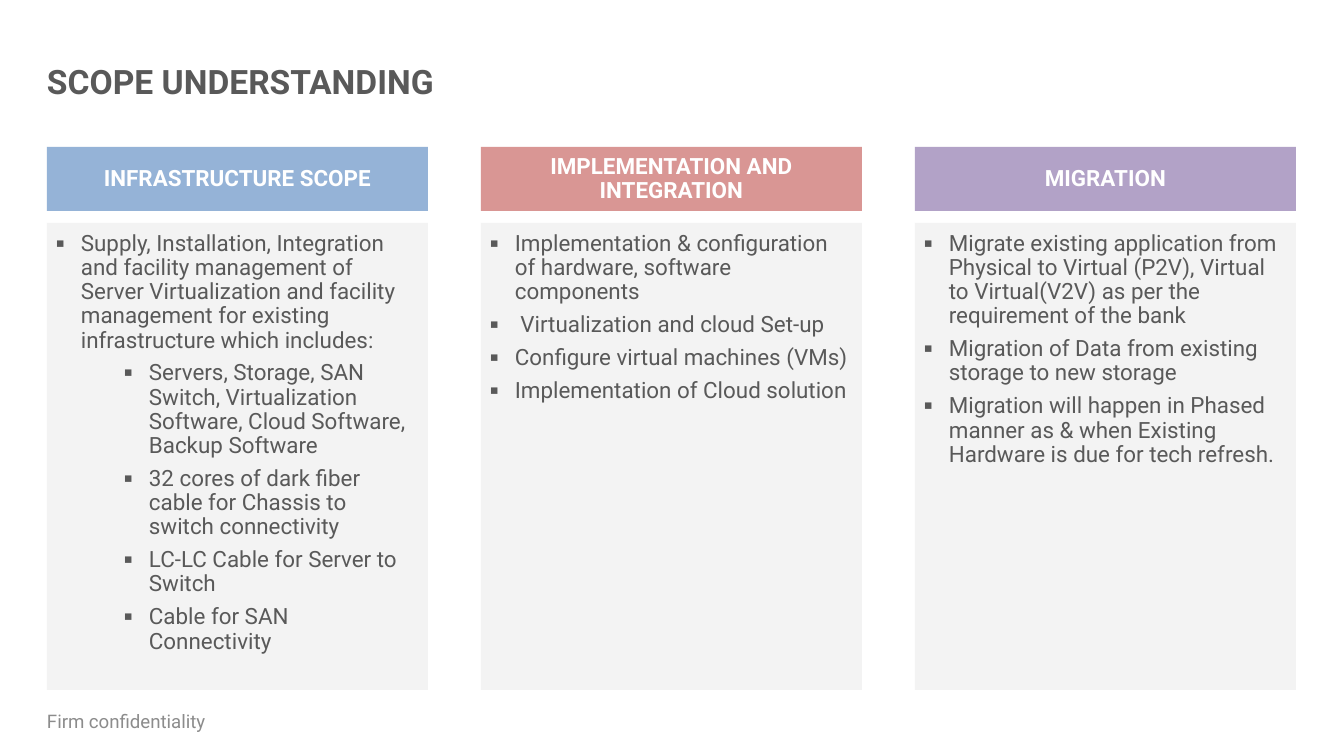
from lxml.etree import SubElement
from pptx import Presentation
from pptx.dml.color import RGBColor
from pptx.enum.shapes import MSO_SHAPE
from pptx.enum.text import MSO_ANCHOR, PP_ALIGN
from pptx.oxml.ns import qn
from pptx.util import Emu, Pt

COLORS = {
    "text": "595959",
    "footer": "8C8C8C",
    "white": "FFFFFF",
    "panel": "F2F2F2",
    "blue": "95B3D7",
    "red": "D99694",
    "purple": "B2A2C7",
}
EMU_PER_PX = 914400 / 134.4
LEFT, COLUMN_WIDTH, COLUMN_PITCH = 47, 381, 434
HANGING = 25
LEVEL_MARGINS = {1: 25, 2: 93}

SCOPES = [
    ("INFRASTRUCTURE SCOPE", "blue", [
        (1, "Supply, Installation, Integration and facility management of Server "
            "Virtualization and facility management for existing infrastructure "
            "which includes:"),
        (2, "Servers, Storage, SAN Switch, Virtualization Software, Cloud Software, "
            "Backup Software"),
        (2, "32 cores of dark fiber cable for Chassis to switch connectivity"),
        (2, "LC-LC Cable for Server to Switch"),
        (2, "Cable for SAN Connectivity"),
    ]),
    ("IMPLEMENTATION AND INTEGRATION", "red", [
        (1, "Implementation & configuration of hardware, software components"),
        (1, " Virtualization and cloud Set-up"),
        (1, "Configure virtual machines (VMs)"),
        (1, "Implementation of Cloud solution"),
    ]),
    ("MIGRATION", "purple", [
        (1, "Migrate existing application from Physical to Virtual (P2V), Virtual to "
            "Virtual(V2V) as per the requirement of the bank"),
        (1, "Migration of Data from existing storage to new storage"),
        (1, "Migration will happen in Phased manner as & when Existing Hardware is "
            "due for tech refresh."),
    ]),
]


def px(length):
    return Emu(round(length * EMU_PER_PX))


class ScopeSlide:
    """Draws styled labels, headers and bullet panels on one slide."""

    font_name = "Roboto"

    def __init__(self, slide):
        self.slide = slide

    def style(self, paragraph, size, color, bold=False):
        font = paragraph.font
        font.name, font.size, font.bold = self.font_name, Pt(size), bold
        font.color.rgb = RGBColor.from_string(COLORS[color])

    def frame(self, shape, insets, anchor):
        frame = shape.text_frame
        frame.word_wrap = True
        frame.vertical_anchor = anchor
        (frame.margin_left, frame.margin_top,
         frame.margin_right, frame.margin_bottom) = map(px, insets)
        return frame

    def label(self, text, box, size, color, bold=False):
        shape = self.slide.shapes.add_textbox(*map(px, box))
        frame = self.frame(shape, (0, 7, 0, 7), MSO_ANCHOR.MIDDLE)
        frame.text = text
        self.style(frame.paragraphs[0], size, color, bold)

    def block(self, box, color):
        shape = self.slide.shapes.add_shape(MSO_SHAPE.RECTANGLE, *map(px, box))
        shape.shadow.inherit = False
        shape.fill.solid()
        shape.fill.fore_color.rgb = RGBColor.from_string(COLORS[color])
        shape.line.fill.background()
        return shape

    def header(self, text, box, color):
        frame = self.frame(self.block(box, color), (12, 7, 12, 7), MSO_ANCHOR.MIDDLE)
        frame.text = text
        heading = frame.paragraphs[0]
        heading.alignment = PP_ALIGN.CENTER
        heading.line_spacing = 0.9
        self.style(heading, 12, "white", bold=True)

    def panel(self, items, box):
        shape = self.block(box, "panel")
        tint = shape.fill._xPr.find(qn("a:solidFill"))[0]
        SubElement(tint, qn("a:alpha"), val="90000")
        frame = self.frame(shape, (9, 9, 12, 13), MSO_ANCHOR.TOP)
        for index, (level, text) in enumerate(items):
            item = frame.add_paragraph() if index else frame.paragraphs[0]
            item.text = text
            self.bullet(item, level)
            item.alignment = PP_ALIGN.LEFT
            item.line_spacing = 0.9
            item.space_before = Pt(3 if index else 0)
            item.space_after = Pt(1.7)
            self.style(item, 12, "text")

    def bullet(self, paragraph, level):
        paragraph.level = level
        properties = paragraph._p.get_or_add_pPr()
        properties.set("marL", str(px(LEVEL_MARGINS[level])))
        properties.set("indent", str(px(-HANGING)))
        SubElement(properties, qn("a:buFont"), typeface=self.font_name)
        SubElement(properties, qn("a:buChar"), char="▪")


def main():
    presentation = Presentation()
    presentation.slide_width, presentation.slide_height = px(1344), px(756)
    blank = presentation.slide_layouts[6]
    scope = ScopeSlide(presentation.slides.add_slide(blank))

    scope.label("Firm confidentiality", (LEFT, 701, 212, 40), 10, "footer")
    scope.label("SCOPE UNDERSTANDING", (LEFT, 54, 1107, 54), 18, "text", bold=True)
    for column, (heading, color, items) in enumerate(SCOPES):
        left = LEFT + column * COLUMN_PITCH
        scope.header(heading, (left, 147, COLUMN_WIDTH, 64), color)
        scope.panel(items, (left, 223, COLUMN_WIDTH, 467))

    presentation.save("out.pptx")


if __name__ == "__main__":
    main()
